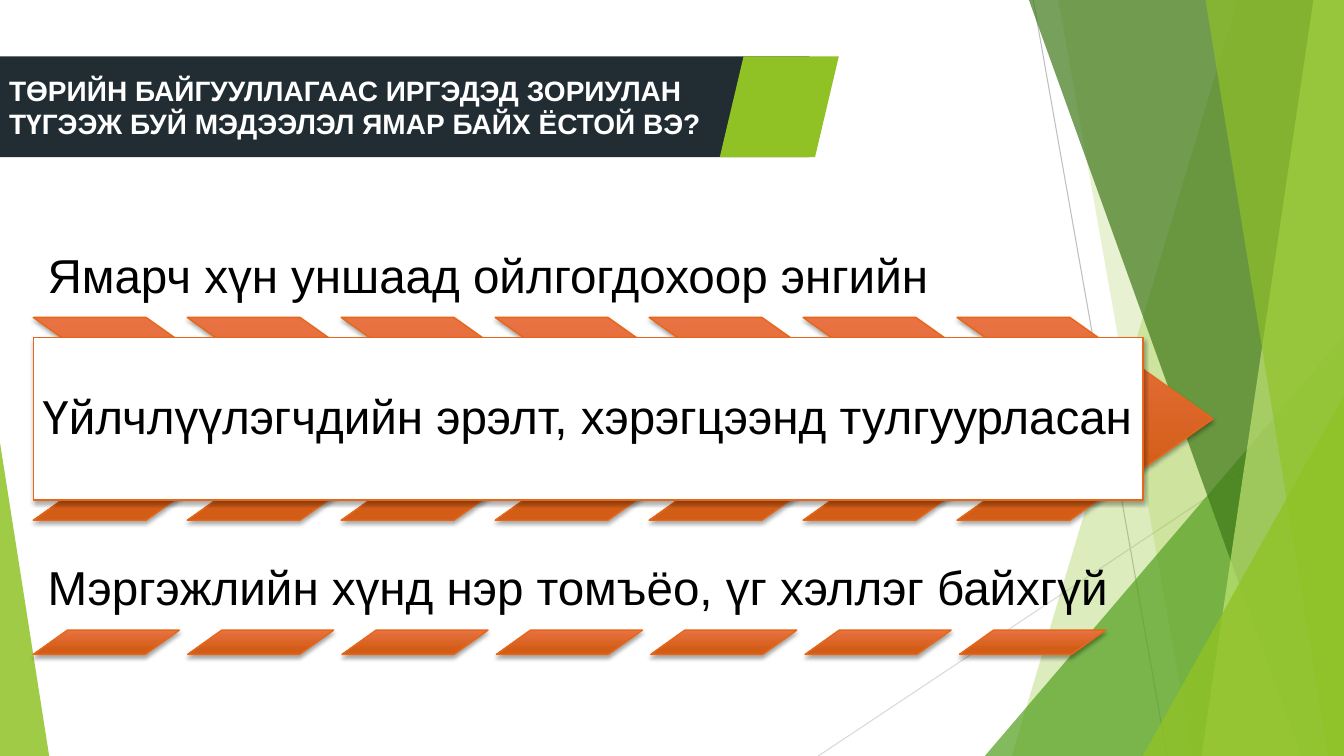
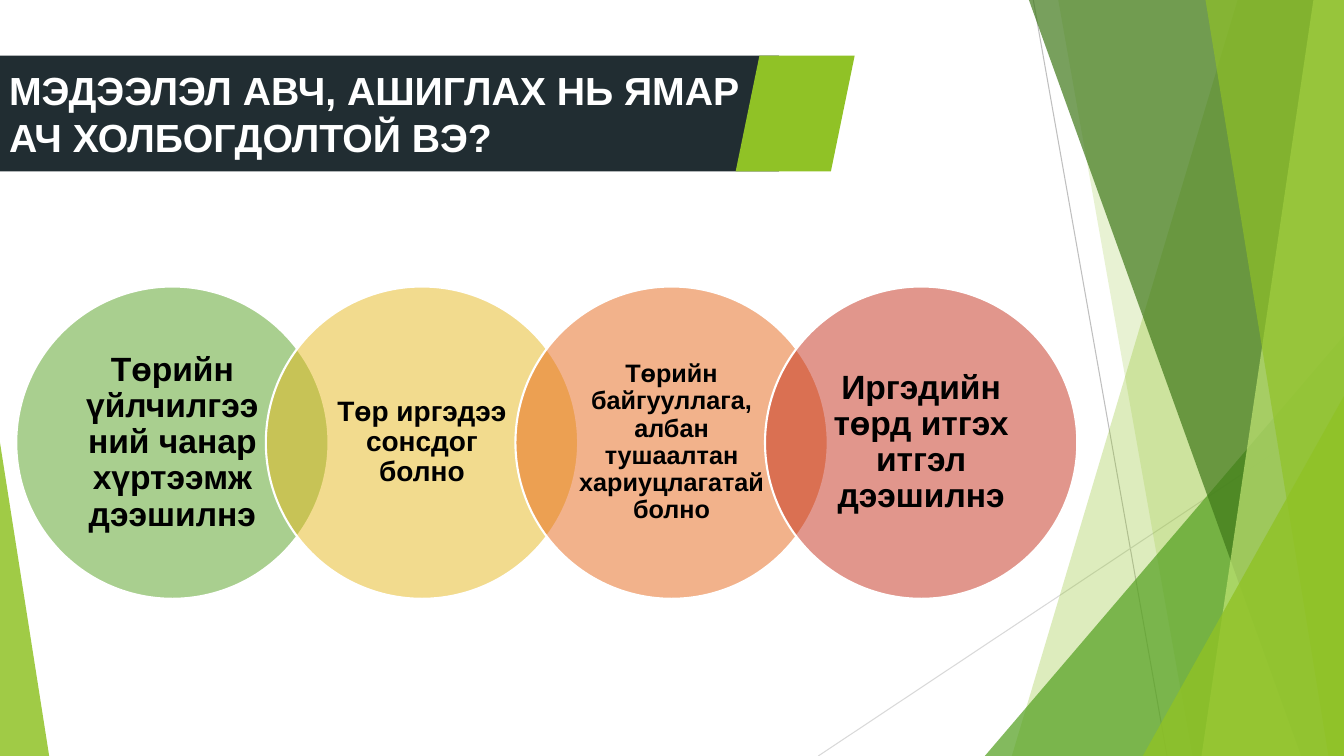
import dataclasses

import lxml.etree
import pptx
import pptx.dml.color
import pptx.enum.shapes
import pptx.enum.text
import pptx.oxml.ns
import pptx.util

Cm = pptx.util.Cm
Pt = pptx.util.Pt
qn = pptx.oxml.ns.qn
SHAPE = pptx.enum.shapes.MSO_SHAPE
ALIGN = pptx.enum.text.PP_ALIGN
ANCHOR = pptx.enum.text.MSO_ANCHOR


def rgb(colour):
    return pptx.dml.color.RGBColor.from_string(colour)


@dataclasses.dataclass(frozen=True)
class Theme:
    font: str = "Arial"
    width: float = 33.87
    height: float = 19.05
    white: str = "FFFFFF"
    black: str = "000000"
    band: str = "212D32"
    lime: str = "90C226"
    pale_lime: str = "C0E474"
    green: str = "54A021"
    dark_green: str = "3F7819"
    yellow: str = "E6B91E"
    orange: str = "E76618"
    orange_top: str = "E87242"
    orange_bottom: str = "D35D16"
    red: str = "C42F1A"
    grey: str = "BFBFBF"
    light_grey: str = "D9D9D9"
    small_title: int = 20
    title: int = 28
    statement: int = 34
    circle_large: int = 24
    circle_medium: int = 20
    circle_small: int = 18


class Deck:
    def __init__(self, theme):
        self.t = theme
        self.s = None
        self.prs = pptx.Presentation()
        self.prs.slide_width = Cm(theme.width)
        self.prs.slide_height = Cm(theme.height)

    def slide(self):
        self.s = self.prs.slides.add_slide(self.prs.slide_layouts[6])
        self.backdrop()

    def paint(self, sp, fill, alpha=100, line=None, weight=1):
        sp.shadow.inherit = False
        sp.fill.solid()
        sp.fill.fore_color.rgb = rgb(fill)
        if alpha < 100:
            clr = sp._element.spPr.find(qn("a:solidFill"))[0]
            lxml.etree.SubElement(clr, qn("a:alpha"), val=str(alpha * 1000))
        if line:
            sp.line.color.rgb = rgb(line)
            sp.line.width = Pt(weight)
        else:
            sp.line.fill.background()

    def shape(self, kind, x, y, w, h, fill, alpha=100, line=None, weight=1, adj=None):
        sp = self.s.shapes.add_shape(kind, Cm(x), Cm(y), Cm(w), Cm(h))
        if adj is not None:
            sp.adjustments[0] = adj
        self.paint(sp, fill, alpha, line, weight)
        return sp

    def line(self, x1, y1, x2, y2, colour):
        kind = pptx.enum.shapes.MSO_CONNECTOR.STRAIGHT
        cn = self.s.shapes.add_connector(kind, Cm(x1), Cm(y1), Cm(x2), Cm(y2))
        cn.line.color.rgb = rgb(colour)
        cn.line.width = Pt(0.75)
        lxml.etree.SubElement(cn._element.spPr, qn("a:effectLst"))

    def facet(self, top, bottom, fill, alpha):
        w, h = self.t.width, self.t.height
        fb = self.s.shapes.build_freeform(Cm(top), 0)
        fb.add_line_segments([(Cm(x), Cm(y)) for x, y in ((w, 0), (w, h), (bottom, h))])
        self.paint(fb.convert_to_shape(), fill, alpha)

    def corner(self, x, y, w, fill, alpha, peak):
        self.shape(SHAPE.ISOSCELES_TRIANGLE, x, y, w, self.t.height - y, fill, alpha, adj=peak)

    def backdrop(self):
        t = self.t
        self.line(26.04, 0, 29.41, t.height, t.grey)
        self.line(t.width, 10.24, 20.62, t.height, t.light_grey)
        self.facet(31.19, 25.5, t.lime, 30)
        self.facet(26.67, 30.05, t.lime, 20)
        self.corner(24.82, 8.46, t.width - 24.82, t.green, 72, 1)
        self.facet(25.93, 32.79, t.dark_green, 70)
        self.facet(33.1, 30.28, t.pale_lime, 70)
        self.facet(30.38, 33.48, t.lime, 65)
        self.corner(28.8, 9.98, t.width - 28.8, t.lime, 80, 1)
        self.corner(0, 11.15, 1.24, t.lime, 85, 0)

    def text(self, sp, text, size, colour, bold=False, align=ALIGN.LEFT,
             anchor=ANCHOR.MIDDLE, insets=(0.25, 0.13, 0.25, 0.13), spacing=0.9):
        tf = sp.text_frame
        tf.word_wrap = True
        tf.vertical_anchor = anchor
        tf.margin_left, tf.margin_top, tf.margin_right, tf.margin_bottom = map(Cm, insets)
        p = tf.paragraphs[0]
        p.text = text
        p.alignment = align
        p.line_spacing = spacing
        p.font.name = self.t.font
        p.font.size = Pt(size)
        p.font.bold = bold
        p.font.color.rgb = rgb(colour)

    def title(self, text, size, y, w, h, tab_x):
        band = self.shape(SHAPE.RECTANGLE, 0, y, w, h, self.t.band)
        self.text(band, text, size, self.t.white, bold=True,
                  insets=(0.23, 0.13, 0.5, 0.13), spacing=1)
        self.shape(SHAPE.FLOWCHART_DATA, tab_x, y, 3, h, self.t.lime)

    def cast_shadow(self, sp):
        effects = sp._element.spPr.find(qn("a:effectLst"))
        shadow = lxml.etree.SubElement(
            effects, qn("a:outerShdw"), blurRad=str(Pt(3)), dist=str(Pt(2)),
            dir="5400000", algn="ctr", rotWithShape="0")
        clr = lxml.etree.SubElement(shadow, qn("a:srgbClr"), val=self.t.black)
        lxml.etree.SubElement(clr, qn("a:alpha"), val="35000")

    def ribbon(self, kind, x, y, w, h, pitch, adj, count=7):
        t = self.t
        for i in range(count):
            sp = self.shape(kind, x + i * pitch, y, w, h, t.orange, line=t.orange, adj=adj)
            sp.fill.gradient()
            sp.fill.gradient_angle = 270
            stops = zip(sp.fill.gradient_stops, (t.orange_top, t.orange_bottom), (0, 0.78))
            for stop, colour, position in stops:
                stop.color.rgb = rgb(colour)
                stop.position = position
            self.cast_shadow(sp)

    def statement(self, text, x, y):
        tb = self.s.shapes.add_textbox(Cm(x), Cm(y), Cm(27.61), Cm(2.51))
        self.text(tb, text, self.t.statement, self.t.black,
                  anchor=ANCHOR.BOTTOM, insets=(0.36,) * 4)

    def framed_statement(self, text, x, y):
        sp = self.shape(SHAPE.RECTANGLE, x, y, 27.97, 4.09, self.t.white, line=self.t.orange)
        self.cast_shadow(sp)
        self.text(sp, text, self.t.statement, self.t.black, insets=(0.23, 0.2, 0.2, 0.2))

    def circles(self, items, x, y, diameter, pitch):
        for i, (text, size, fill) in enumerate(items):
            sp = self.shape(SHAPE.OVAL, x + i * pitch, y, diameter, diameter,
                            fill, 50, self.t.white, 1.5)
            self.text(sp, text, size, self.t.black, bold=True,
                      align=ALIGN.CENTER, insets=(0.42, 0.08, 0.42, 0.08))


def information_slide(d):
    left = 0.84
    d.slide()
    d.statement("Ямарч хүн уншаад ойлгогдохоор энгийн", left, 5.51)
    d.ribbon(SHAPE.CHEVRON, left, 8, 6.45, 5.11, 3.88, 0.706)
    d.framed_statement("Үйлчлүүлэгчдийн эрэлт, хэрэгцээнд тулгуурласан", left, 8.51)
    d.statement("Мэргэжлийн хүнд нэр томъёо, үг хэллэг байхгүй", left, 13.36)
    d.ribbon(SHAPE.PARALLELOGRAM, left, 15.88, 3.68, 0.61, 3.89, 1.408)
    d.title("ТӨРИЙН БАЙГУУЛЛАГААС ИРГЭДЭД ЗОРИУЛАН ТҮГЭЭЖ БУЙ МЭДЭЭЛЭЛ ЯМАР БАЙХ ЁСТОЙ ВЭ?",
            d.t.small_title, 1.42, 20.4, 2.54, 18.14)


def benefits_slide(d):
    t = d.t
    d.slide()
    d.circles([
        ("Төрийн үйлчилгээний чанар хүртээмж дээшилнэ", t.circle_large, t.green),
        ("Төр иргэдээ сонсдог болно", t.circle_medium, t.yellow),
        ("Төрийн байгууллага, албан тушаалтан хариуцлагатай болно", t.circle_small, t.orange),
        ("Иргэдийн төрд итгэх итгэл дээшилнэ", t.circle_large, t.red),
    ], 0.41, 7.22, 7.87, 6.29)
    d.title("МЭДЭЭЛЭЛ АВЧ, АШИГЛАХ НЬ ЯМАР АЧ ХОЛБОГДОЛТОЙ ВЭ?",
            t.title, 1.4, 19.63, 2.92, 18.54)


def main():
    d = Deck(Theme())
    information_slide(d)
    benefits_slide(d)
    d.prs.save("out.pptx")


if __name__ == "__main__":
    main()
